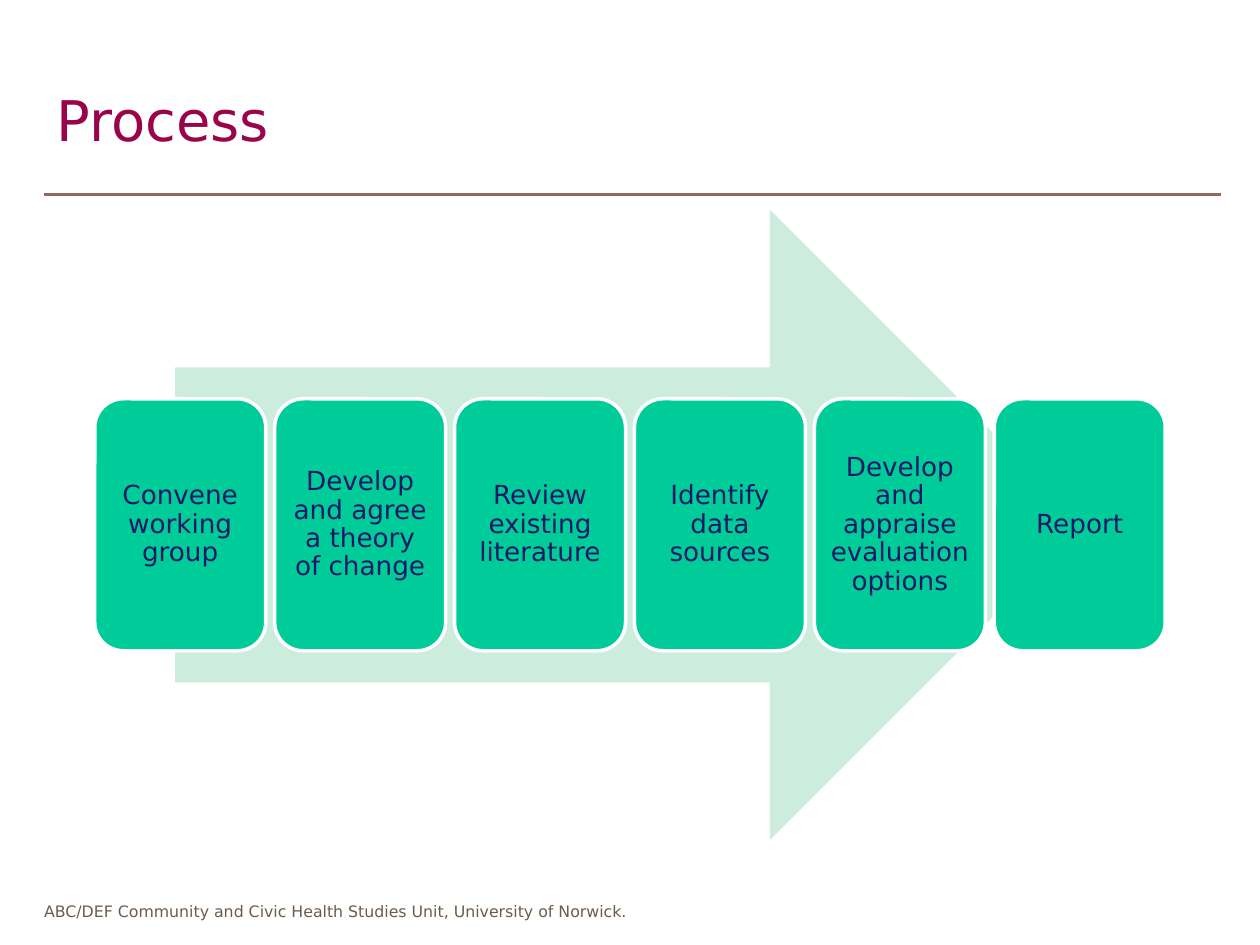
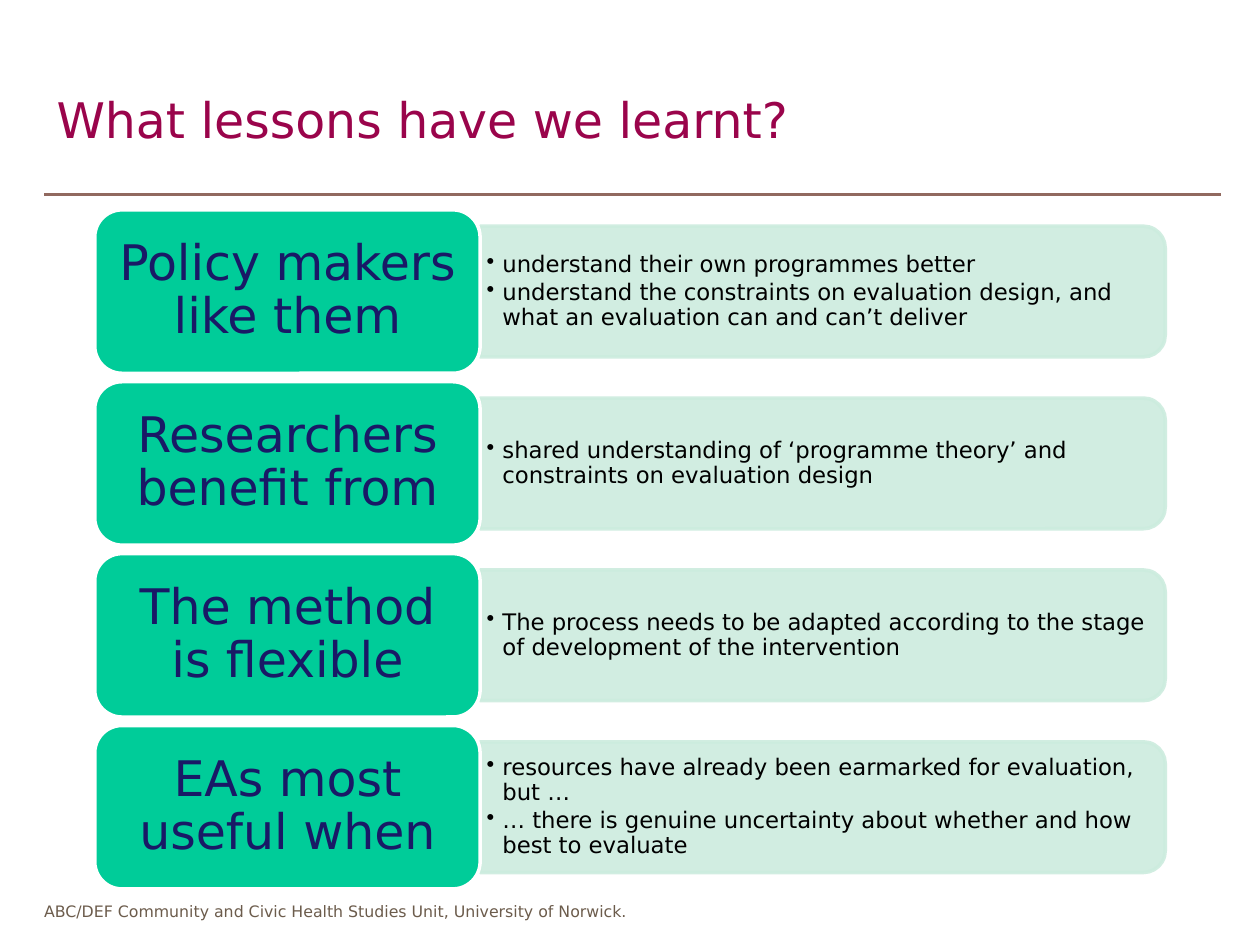
from lxml import etree
from pptx import Presentation
from pptx.dml.color import RGBColor
from pptx.enum.shapes import MSO_CONNECTOR, MSO_SHAPE
from pptx.enum.text import MSO_ANCHOR, MSO_AUTO_SIZE, PP_ALIGN
from pptx.oxml.ns import qn
from pptx.util import Cm, Pt

LINE = MSO_CONNECTOR.STRAIGHT
ARROW = MSO_SHAPE.RIGHT_ARROW
ROUND = MSO_SHAPE.ROUNDED_RECTANGLE
BAND = MSO_SHAPE.ROUND_2_SAME_RECTANGLE
LEFT, CENTER = PP_ALIGN.LEFT, PP_ALIGN.CENTER
TOP, MIDDLE = MSO_ANCHOR.TOP, MSO_ANCHOR.MIDDLE
FIXED = MSO_AUTO_SIZE.NONE

FONT = "DejaVu Sans"
COLORS = {
    "title": "9A044B",
    "rule": "91695F",
    "footer": "6C5C4C",
    "green": "00CC99",
    "pale": "CCECDE",
    "navy": "191966",
    "black": "000000",
    "white": "FFFFFF",
}
FOOTER = "ABC/DEF Community and Civic Health Studies Unit, University of Norwick."
STEPS = [
    "Convene working group",
    "Develop and agree a theory of change",
    "Review existing literature",
    "Identify data sources",
    "Develop and appraise evaluation options",
    "Report",
]
LESSONS = [
    ("Policy makers like them", [
        "understand their own programmes better",
        "understand the constraints on evaluation design, and what an "
        "evaluation can and can’t deliver",
    ]),
    ("Researchers benefit from", [
        "shared understanding of ‘programme theory’ and constraints on "
        "evaluation design",
    ]),
    ("The method is flexible", [
        "The process needs to be adapted according to the stage of "
        "development of the intervention",
    ]),
    ("EAs most useful when", [
        "resources have already been earmarked for evaluation, but …",
        "… there is genuine uncertainty about whether and how best to evaluate",
    ]),
]


def color(name):
    """Return the named colour."""
    return RGBColor.from_string(COLORS[name])


def place(box):
    """Turn a box in centimetres into lengths."""
    return [Cm(side) for side in box]


def write(frame, *lines, size, ink, align=LEFT, anchor=MIDDLE,
          pad=(0.25, 0.13), lead=1.0, after=0, bullet=False):
    """Fill a text frame with one paragraph for each line."""
    frame.word_wrap = True
    frame.auto_size = FIXED
    frame.vertical_anchor = anchor
    frame.margin_left = frame.margin_right = Cm(pad[0])
    frame.margin_top = frame.margin_bottom = Cm(pad[1])
    for index, line in enumerate(lines):
        para = frame.add_paragraph() if index else frame.paragraphs[0]
        para.alignment = align
        para.line_spacing = lead
        para.space_after = Pt(after)
        run = para.add_run()
        run.text = line
        run.font.name = FONT
        run.font.size = Pt(size)
        run.font.color.rgb = color(ink)
        if bullet:
            props = para._p.get_or_add_pPr()
            props.set("marL", str(Cm(0.32)))
            props.set("indent", str(-Cm(0.32)))
            etree.SubElement(props, qn("a:buChar")).set("char", "•")


def draw(slide, kind, box, fill, edge=None, alpha=None):
    """Add a flat preset shape."""
    shape = slide.shapes.add_shape(kind, *place(box))
    shape.shadow.inherit = False
    shape.fill.solid()
    shape.fill.fore_color.rgb = color(fill)
    if edge:
        shape.line.color.rgb = color(edge)
        shape.line.width = Pt(2)
    else:
        shape.line.fill.background()
    if alpha:
        for tone in shape.element.spPr.iter(qn("a:srgbClr")):
            etree.SubElement(tone, qn("a:alpha")).set("val", str(alpha * 1000))
    return shape


def card(slide, box, text, size, pad):
    """Add a green rounded box with centred text."""
    shape = draw(slide, ROUND, box, "green", "white")
    write(shape.text_frame, text, size=size, ink="navy", align=CENTER,
          pad=pad, lead=0.9)


def start(deck, title, size):
    """Add a slide with its title, rule and footer."""
    slide = deck.slides.add_slide(deck.slide_layouts[5])
    head = slide.shapes.title
    head.left, head.top, head.width, head.height = place((0.89, 1.27, 23.7, 2.26))
    write(head.text_frame, title, size=size, ink="title")
    rule = slide.shapes.add_connector(LINE, *place((0.89, 3.92, 24.61, 3.92)))
    rule.line.color.rgb = color("rule")
    rule.line.width = Pt(1.75)
    etree.SubElement(rule._element.spPr, qn("a:effectLst"))
    foot = slide.shapes.add_textbox(*place((0.64, 18.05, 13, 0.64)))
    write(foot.text_frame, FOOTER, size=9, ink="footer", anchor=TOP)
    return slide


def process(slide, box, gap=0.18):
    """Draw the steps in a row over a wide arrow."""
    left, top, width, height = box
    draw(slide, ARROW, (left + width * 0.075, top, width * 0.85, height), "pale")
    wide = (width - gap * (len(STEPS) - 1)) / len(STEPS)
    tall = height * 0.4
    for index, step in enumerate(STEPS):
        spot = (left + index * (wide + gap), top + (height - tall) / 2, wide, tall)
        card(slide, spot, step, 15, (0.15, 0.15))


def lesson(slide, box, name, points):
    """Draw one lesson: a label and a band of points."""
    left, top, width, height = box
    label = width * 0.36
    wide, tall = width - label, height * 0.8
    mid, center = top + height / 2, left + label + wide / 2
    band = draw(slide, BAND, (center - tall / 2, mid - wide / 2, tall, wide),
                "pale", "pale", 90)
    band.rotation = 90
    area = (left + label, mid - tall / 2, wide - 0.13, tall)
    note = slide.shapes.add_textbox(*place(area))
    write(note.text_frame, *points, size=13, ink="black", pad=(0.13, 0.08),
          lead=0.9, after=2, bullet=True)
    card(slide, (left, top, label, height), name, 28, (0.3, 0.15))


def lessons(slide, box, gap=0.17):
    """Stack the lessons in equal rows."""
    left, top, width, height = box
    tall = (height - gap * (len(LESSONS) - 1)) / len(LESSONS)
    for index, (name, points) in enumerate(LESSONS):
        lesson(slide, (left, top + index * (tall + gap), width, tall), name, points)


def main():
    """Build and save the deck."""
    deck = Presentation()
    deck.slide_width, deck.slide_height = Cm(25.4), Cm(19.05)
    process(start(deck, "Process", 32), (1.91, 4.23, 21.58, 12.7))
    lessons(start(deck, "What lessons have we learnt?", 28),
            (1.91, 4.23, 21.58, 13.69))
    deck.save("out.pptx")


if __name__ == "__main__":
    main()
